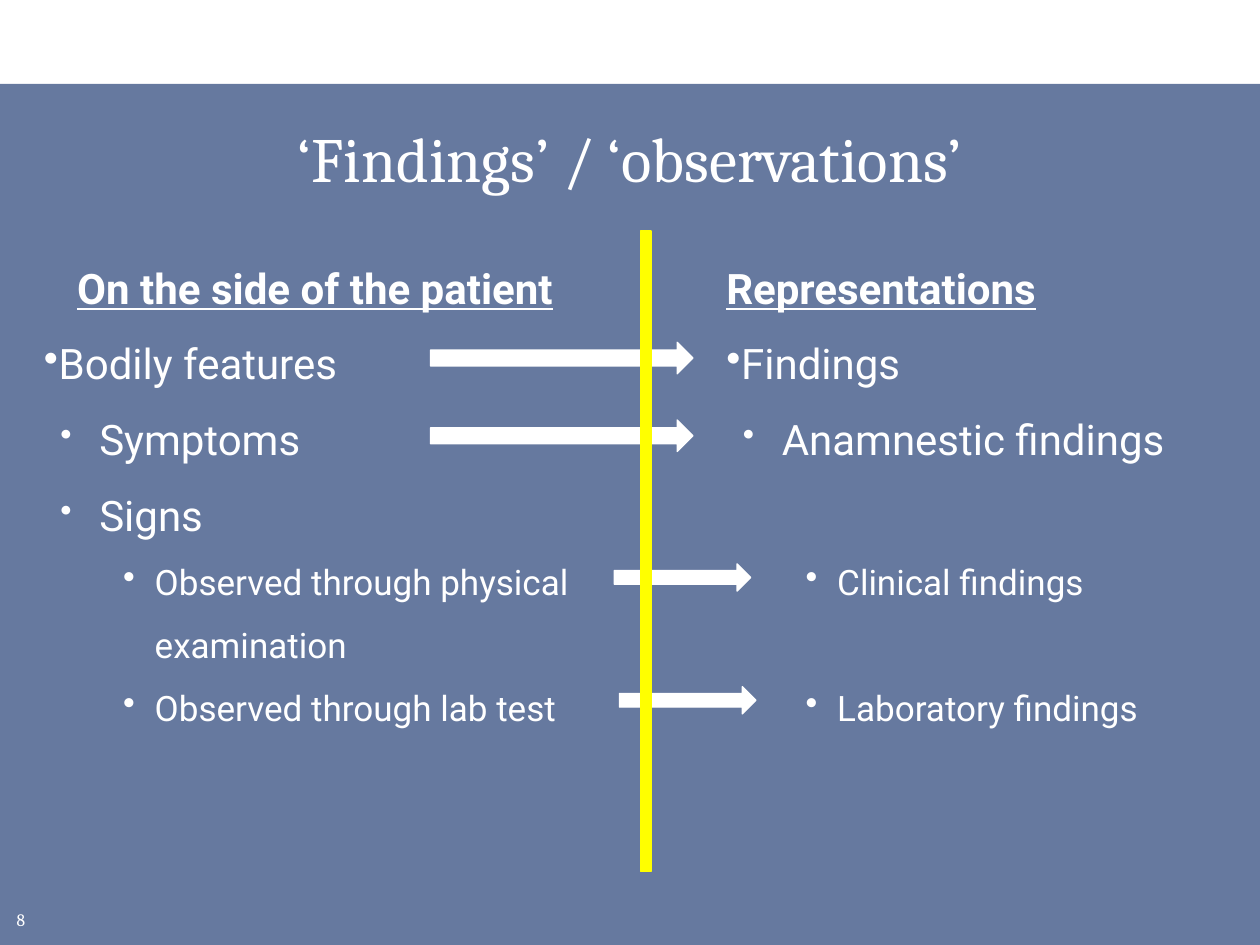
from typing import NamedTuple, Optional

from lxml.etree import SubElement
from pptx import Presentation
from pptx.dml.color import RGBColor
from pptx.enum.shapes import MSO_SHAPE as Preset
from pptx.enum.text import MSO_ANCHOR as Anchor, PP_ALIGN as Align
from pptx.oxml.ns import qn
from pptx.util import Inches, Pt

COLORS = {"panel": "002060", "white": "FFFFFF", "divider": "FFFF00"}
UNIT = Inches(10) / 120  # the slide is a grid of 120 columns by 90 rows
LINE_SPACING = 1.5
BLANK_24, BLANK_20 = 43.2, 36  # heights of a skipped line, in points


class Box(NamedTuple):
    left: float
    top: float
    width: float
    height: float

    def lengths(self) -> list[int]:
        return [round(value * UNIT) for value in self]


class Level(NamedTuple):
    margin: float  # inches
    indent: float  # inches
    size: int
    bullet_percent: int


class Item(NamedTuple):
    text: str
    level: int = 0
    heading: bool = False
    align: Align = Align.LEFT
    space_before: float = 0


LEVELS = [Level(0, -0.38, 24, 100), Level(0.44, -0.31, 24, 80), Level(0.88, -0.25, 20, 100)]

PATIENT_BOX = Box(3, 22, 54, 65)
PATIENT_ITEMS = [
    Item("On the side of the patient", heading=True, align=Align.CENTER),
    Item("Bodily features"),
    Item("Symptoms", 1),
    Item("Signs", 1),
    Item("Observed through physical examination", 2),
    Item("Observed through lab test", 2),
]
REPRESENTATION_BOX = Box(68, 22, 49, 65)
REPRESENTATION_ITEMS = [
    Item("Representations", heading=True),
    Item("Findings"),
    Item("Anamnestic findings", 1),
    Item("Clinical findings", 2, space_before=BLANK_24),
    Item("Laboratory findings", 2, space_before=BLANK_20),
]
ARROWS = [
    Box(41, 32.6, 25, 3),
    Box(41, 40, 25, 3),
    Box(58.5, 53.7, 13, 2.6),
    Box(59, 65.4, 13, 2.6),
]


def color(name: str) -> RGBColor:
    return RGBColor.from_string(COLORS[name])


def add_filled(slide, preset: Preset, box: Box, fill: str, line: Optional[str] = None):
    shape = slide.shapes.add_shape(preset, *box.lengths())
    shape.shadow.inherit = False
    shape.fill.solid()
    shape.fill.fore_color.rgb = color(fill)
    if line:
        shape.line.color.rgb = color(line)
        shape.line.width = Pt(0.75)
    else:
        shape.line.fill.background()
    return shape


def add_text_frame(slide, box: Box, anchor: Anchor = Anchor.TOP):
    frame = slide.shapes.add_textbox(*box.lengths()).text_frame
    frame.word_wrap = True
    frame.vertical_anchor = anchor
    return frame


def add_run(paragraph, text: str, font_name: str, size: int, heading: bool = False) -> None:
    run = paragraph.add_run()
    run.text = text
    run.font.name = font_name
    run.font.size = Pt(size)
    run.font.color.rgb = color("white")
    run.font.bold = run.font.underline = heading


def add_bullet(paragraph, percent: int) -> None:
    properties = paragraph._p.get_or_add_pPr()
    bullet_color = SubElement(properties, qn("a:buClr"))
    SubElement(bullet_color, qn("a:srgbClr")).set("val", COLORS["white"])
    SubElement(properties, qn("a:buSzPct")).set("val", str(percent * 1000))
    SubElement(properties, qn("a:buChar")).set("char", "•")


def add_column(slide, box: Box, items: list[Item]) -> None:
    frame = add_text_frame(slide, box)
    for index, item in enumerate(items):
        paragraph = frame.add_paragraph() if index else frame.paragraphs[0]
        level = LEVELS[item.level]
        if not item.heading:
            add_bullet(paragraph, level.bullet_percent)
        properties = paragraph._p.get_or_add_pPr()
        properties.set("marL", str(Inches(level.margin)))
        properties.set("indent", str(Inches(level.indent)))
        paragraph.level = item.level
        paragraph.alignment = item.align
        paragraph.line_spacing = LINE_SPACING
        paragraph.space_before = Pt(item.space_before)
        add_run(paragraph, item.text, "Roboto", level.size, item.heading)


def main() -> None:
    presentation = Presentation()
    presentation.slide_width, presentation.slide_height = Inches(10), Inches(7.5)
    slide = presentation.slides.add_slide(presentation.slide_layouts[6])

    panel = add_filled(slide, Preset.RECTANGLE, Box(0, 8, 120, 82), "panel")
    panel_color = panel.fill._xPr.find(".//" + qn("a:srgbClr"))
    SubElement(panel_color, qn("a:alpha")).set("val", "60000")

    number = add_text_frame(slide, Box(0.4, 86, 4.7, 3)).paragraphs[0]
    add_run(number, "8", "Cambria", 10)

    title = add_text_frame(slide, Box(3, 10, 114, 10), Anchor.MIDDLE).paragraphs[0]
    title.alignment = Align.CENTER
    add_run(title, "‘Findings’ / ‘observations’", "Cambria", 36)

    add_column(slide, PATIENT_BOX, PATIENT_ITEMS)
    add_column(slide, REPRESENTATION_BOX, REPRESENTATION_ITEMS)

    for arrow in ARROWS:
        add_filled(slide, Preset.RIGHT_ARROW, arrow, "white", "white")
    add_filled(slide, Preset.RECTANGLE, Box(61, 22, 1, 61), "divider", "divider")

    presentation.save("out.pptx")


if __name__ == "__main__":
    main()
